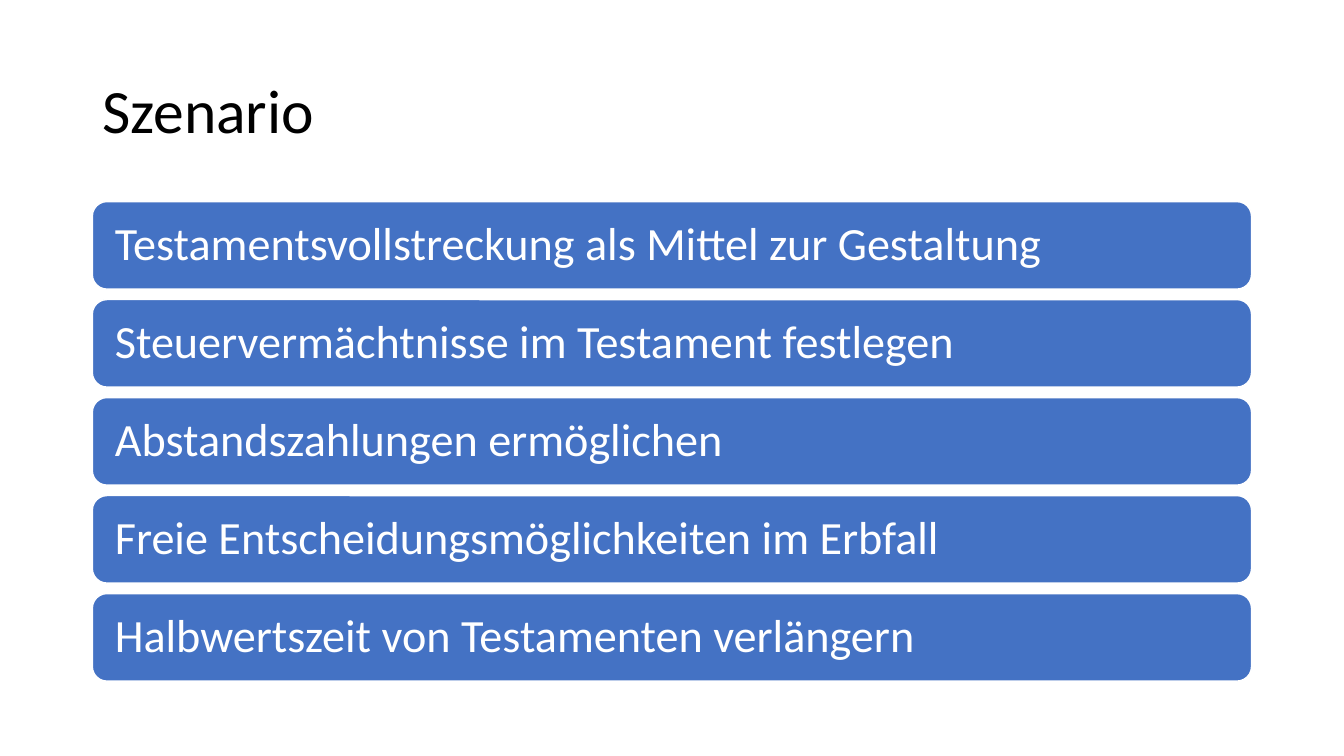
from pptx import Presentation
from pptx.dml.color import RGBColor
from pptx.enum.shapes import MSO_SHAPE
from pptx.enum.text import MSO_ANCHOR, PP_ALIGN
from pptx.util import Pt

EMU_PER_PX = 6350
ROUNDED = MSO_SHAPE.ROUNDED_RECTANGLE
MIDDLE = MSO_ANCHOR.MIDDLE
LEFT = PP_ALIGN.LEFT

COLOURS = {"black": "000000", "white": "FFFFFF", "blue": "4472C4"}
MARGIN, CONTENT_WIDTH = 132, 1656
BAR_TOP, BAR_HEIGHT, BAR_PITCH = 288, 125, 140
MEASURES = [
    "Testamentsvollstreckung als Mittel zur Gestaltung",
    "Steuervermächtnisse im Testament festlegen",
    "Abstandszahlungen ermöglichen",
    "Freie Entscheidungsmöglichkeiten im Erbfall",
    "Halbwertszeit von Testamenten verlängern",
]


def px(*lengths):
    return [length * EMU_PER_PX for length in lengths]


def colour(name):
    return RGBColor.from_string(COLOURS[name])


class Page:
    """Draws titles and text bars in one style on a slide."""

    font_name = "Calibri"

    def __init__(self, slide):
        self.shapes = slide.shapes

    def set_text(self, box, text, size, ink, inset_x, inset_y):
        frame = box.text_frame
        frame.word_wrap = True
        frame.vertical_anchor = MIDDLE
        frame.margin_left, frame.margin_right = px(inset_x, inset_x)
        frame.margin_top, frame.margin_bottom = px(inset_y, inset_y)
        para = frame.paragraphs[0]
        para.text = text
        para.alignment = LEFT
        para.line_spacing = 0.9
        para.font.name = self.font_name
        para.font.size = Pt(size)
        para.font.color.rgb = colour(ink)

    def title(self, text, left, top, width, height):
        box = self.shapes.add_textbox(*px(left, top, width, height))
        self.set_text(box, text, 44, "black", 14, 7)

    def bar(self, text, left, top, width, height):
        box = self.shapes.add_shape(ROUNDED, *px(left, top, width, height))
        box.shadow.inherit = False
        box.fill.solid()
        box.fill.fore_color.rgb = colour("blue")
        box.line.color.rgb = colour("white")
        box.line.width = Pt(1)
        self.set_text(box, text, 33, "white", 26, 20)


def main():
    deck = Presentation()
    deck.slide_width, deck.slide_height = px(1920, 1080)
    page = Page(deck.slides.add_slide(deck.slide_layouts[6]))
    page.title("Szenario", MARGIN, 58, CONTENT_WIDTH, 209)
    for row, measure in enumerate(MEASURES):
        top = BAR_TOP + row * BAR_PITCH
        page.bar(measure, MARGIN, top, CONTENT_WIDTH, BAR_HEIGHT)
    deck.save("out.pptx")


if __name__ == "__main__":
    main()
